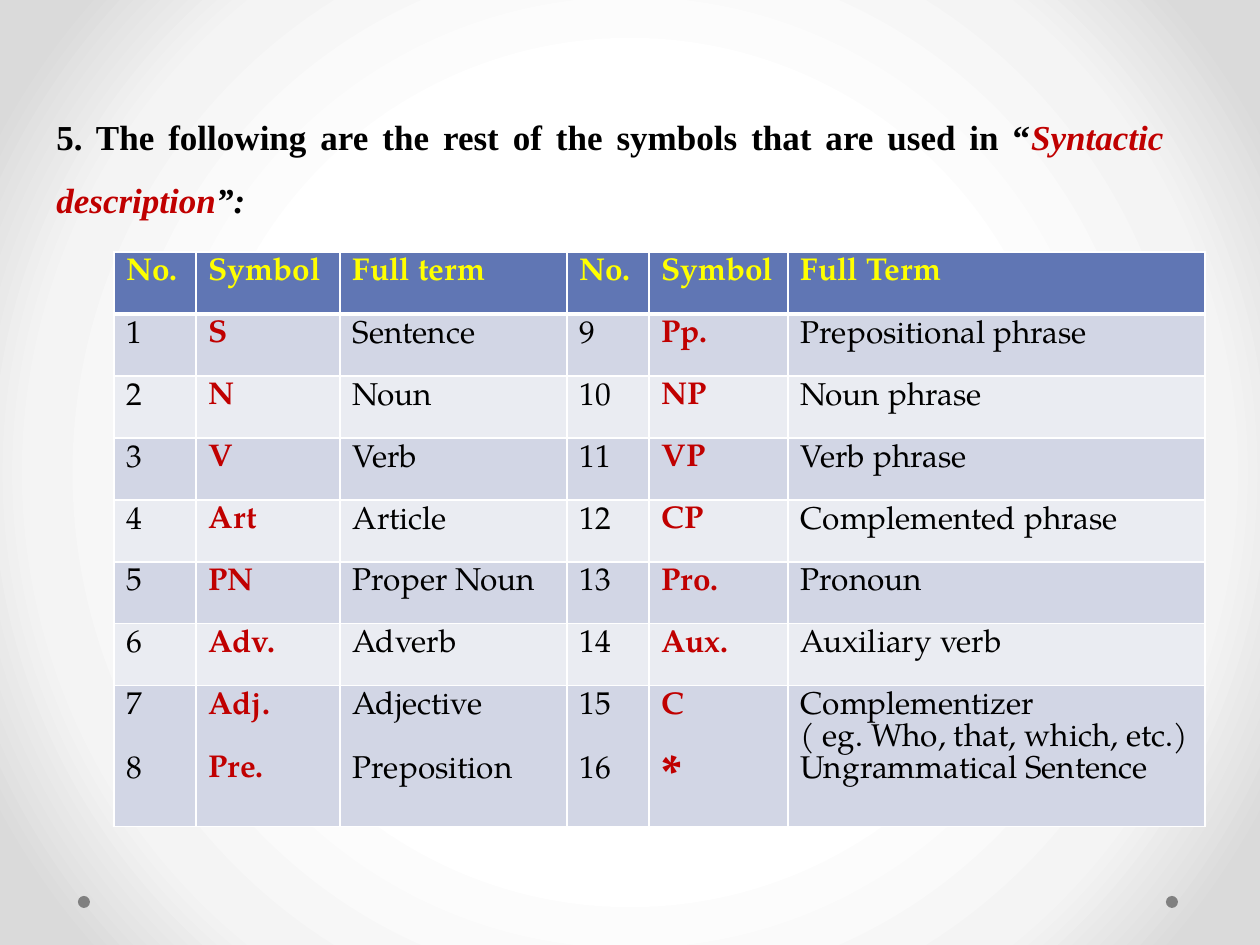
from dataclasses import dataclass

import lxml.etree
import pptx
import pptx.dml.color
import pptx.enum.shapes
import pptx.enum.text
import pptx.oxml
import pptx.oxml.ns
import pptx.util


@dataclass(frozen=True)
class Theme:
    heading_font: str = "Times New Roman"
    table_font: str = "TeX Gyre Pagella"
    heading_pt: int = 20
    table_pt: int = 18
    star_pt: int = 28
    gap_pt: int = 18
    black: str = "000000"
    red: str = "C00000"
    yellow: str = "FFFF00"
    white: str = "FFFFFF"
    dot: str = "808080"
    header: str = "6076B4"
    bands: tuple[str, str] = ("D2D6E5", "EAECF2")
    glow: tuple[tuple[int, str], ...] = ((50, "FFFFFF"), (76, "F4F4F4"), (92, "DADADA"))


@dataclass(frozen=True)
class Box:
    x: int
    y: int
    w: int
    h: int


@dataclass(frozen=True)
class Line:
    text: str
    size: int
    gap: int = 0


@dataclass(frozen=True)
class Entry:
    number: str
    symbol: str
    term: str


THEME = Theme()
EMU_PER_PX = 914400 / 126
DOTS = (Box(78, 896, 12, 12), Box(1166, 896, 12, 12))
HEADING = Box(44, 88, 1132, 140)
TABLE = Box(114, 252, 1091, 558)
COLUMNS = (82, 144, 227, 82, 139, 417)
ROW_H = 62
HEADERS = ("No.", "Symbol", "Full term", "No.", "Symbol", "Full Term")
TERMS = (
    ("S", "Sentence"), ("N", "Noun"), ("V", "Verb"), ("Art", "Article"),
    ("PN", "Proper Noun"), ("Adv.", "Adverb"), ("Adj.", "Adjective"),
    ("Pre.", "Preposition"), ("Pp.", "Prepositional phrase"),
    ("NP", "Noun phrase"), ("VP", "Verb phrase"),
    ("CP", "Complemented phrase"), ("Pro.", "Pronoun"),
    ("Aux.", "Auxiliary verb"),
    ("C", "Complementizer\n( eg. Who, that, which, etc.)"),
    ("*", "Ungrammatical Sentence"),
)
ENTRIES = [Entry(str(n), *term) for n, term in enumerate(TERMS, 1)]


def px(n: int) -> int:
    return pptx.util.Emu(round(n * EMU_PER_PX))


def place(box: Box) -> tuple[int, ...]:
    return tuple(px(n) for n in (box.x, box.y, box.w, box.h))


def rgb(color: str) -> pptx.dml.color.RGBColor:
    return pptx.dml.color.RGBColor.from_string(color)


def set_font(font, name: str, size: int, color: str, bold: bool) -> None:
    font.name = name
    font.size = pptx.util.Pt(size)
    font.color.rgb = rgb(color)
    font.bold = bold


def draw_background(s) -> None:
    stops = "".join(
        f'<a:gs pos="{pos * 1000}"><a:srgbClr val="{color}"/></a:gs>'
        for pos, color in THEME.glow
    )
    bg = pptx.oxml.parse_xml(
        f'<p:bg {pptx.oxml.ns.nsdecls("p", "a")}><p:bgPr><a:gradFill rotWithShape="1">'
        f'<a:gsLst>{stops}</a:gsLst><a:path path="circle">'
        '<a:fillToRect l="50000" t="50000" r="50000" b="50000"/></a:path>'
        '</a:gradFill><a:effectLst/></p:bgPr></p:bg>'
    )
    s.element.find(pptx.oxml.ns.qn("p:cSld")).insert(0, bg)


def draw_dot(s, box: Box) -> None:
    sp = s.shapes.add_shape(pptx.enum.shapes.MSO_SHAPE.OVAL, *place(box))
    sp.shadow.inherit = False
    sp.fill.solid()
    sp.fill.fore_color.rgb = rgb(THEME.dot)
    sp.line.fill.background()


def draw_heading(s) -> None:
    tf = s.shapes.add_textbox(*place(HEADING)).text_frame
    tf.word_wrap = True
    p = tf.paragraphs[0]
    p.alignment = pptx.enum.text.PP_ALIGN.JUSTIFY
    p.line_spacing = 1.5
    for text, color, italic in (
        ("5. The following are the rest of the symbols that are used in “", THEME.black, False),
        ("Syntactic description", THEME.red, True),
        ("”:", THEME.black, True),
    ):
        r = p.add_run()
        r.text = text
        set_font(r.font, THEME.heading_font, THEME.heading_pt, color, True)
        r.font.italic = italic


def set_borders(cell, top: int = 1, bottom: int = 1) -> None:
    tc_pr = cell._tc.get_or_add_tcPr()
    for i, (side, width) in enumerate((("L", 1), ("R", 1), ("T", top), ("B", bottom))):
        ln = lxml.etree.Element(
            pptx.oxml.ns.qn(f"a:ln{side}"), w=str(pptx.util.Pt(width))
        )
        fill = lxml.etree.SubElement(ln, pptx.oxml.ns.qn("a:solidFill"))
        lxml.etree.SubElement(fill, pptx.oxml.ns.qn("a:srgbClr"), val=THEME.white)
        tc_pr.insert(i, ln)


def fill_cell(cell, lines: list[Line], fill: str, color: str, bold: bool) -> None:
    cell.fill.solid()
    cell.fill.fore_color.rgb = rgb(fill)
    tf = cell.text_frame
    for i, line in enumerate(lines):
        p = tf.add_paragraph() if i else tf.paragraphs[0]
        p.text = line.text
        if line.gap:
            p.space_before = pptx.util.Pt(line.gap)
        set_font(p.font, THEME.table_font, line.size, color, bold)


def stack(texts: list[str]) -> list[Line]:
    lines = "\n".join(texts).split("\n")
    gap = THEME.gap_pt if len(lines) == 2 else 0
    return [
        Line(text, THEME.star_pt if text == "*" else THEME.table_pt, gap if i else 0)
        for i, text in enumerate(lines)
    ]


def row_cells(left: list[Entry], right: list[Entry]) -> list[list[Line]]:
    return [
        stack([getattr(entry, field) for entry in side])
        for side in (left, right)
        for field in ("number", "symbol", "term")
    ]


def draw_table(s) -> None:
    half = len(ENTRIES) // 2
    groups = [slice(i, i + 1) for i in range(half - 2)] + [slice(half - 2, half)]
    table = s.shapes.add_table(len(groups) + 1, len(COLUMNS), *place(TABLE)).table
    for column, width in zip(table.columns, COLUMNS):
        column.width = px(width)
    for row in table.rows:
        row.height = px(ROW_H)
    table.rows[len(groups)].height = px(2 * ROW_H)
    for c, text in enumerate(HEADERS):
        cell = table.cell(0, c)
        fill_cell(cell, [Line(text, THEME.table_pt)], THEME.header, THEME.yellow, True)
        set_borders(cell, bottom=3)
    for i, group in enumerate(groups):
        cells = row_cells(ENTRIES[:half][group], ENTRIES[half:][group])
        for c, lines in enumerate(cells):
            cell = table.cell(i + 1, c)
            symbol = c % 3 == 1
            color = THEME.red if symbol else THEME.black
            fill_cell(cell, lines, THEME.bands[i % 2], color, symbol)
            set_borders(cell, top=1 if i else 3)


def main() -> None:
    prs = pptx.Presentation()
    prs.slide_width, prs.slide_height = px(1260), px(945)
    s = prs.slides.add_slide(prs.slide_layouts[6])
    draw_background(s)
    for dot in DOTS:
        draw_dot(s, dot)
    draw_heading(s)
    draw_table(s)
    prs.save("out.pptx")


if __name__ == "__main__":
    main()
